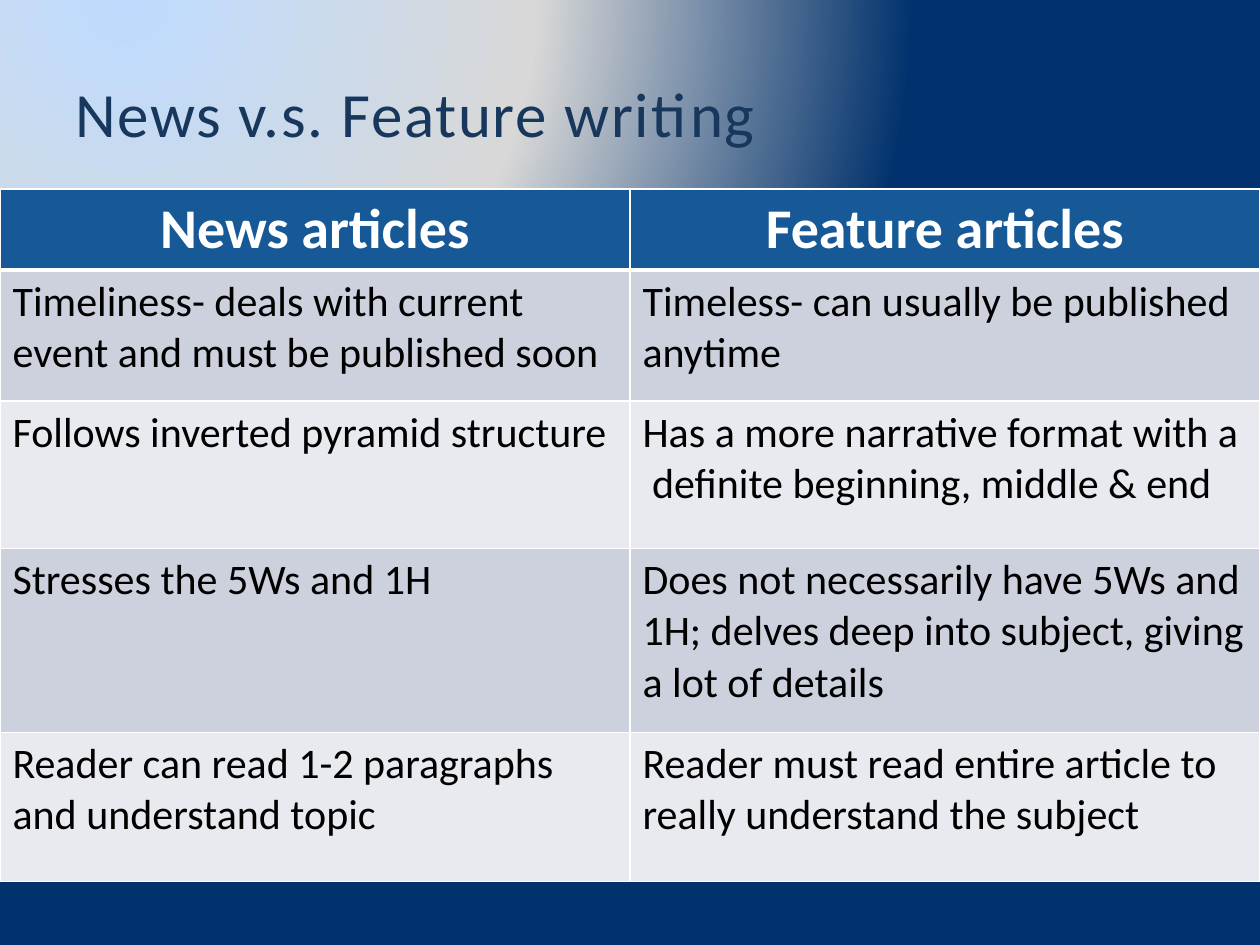
from dataclasses import dataclass

from pptx import Presentation
from pptx.dml.color import RGBColor
from pptx.enum.text import MSO_ANCHOR, PP_ALIGN
from pptx.oxml import parse_xml
from pptx.oxml.ns import nsdecls
from pptx.util import Cm, Pt


@dataclass(frozen=True)
class Theme:
    font: str = "Calibri"
    title_color: str = "17375D"
    header_fill: str = "165996"
    header_text: str = "FFFFFF"
    body_text: str = "000000"
    row_fills: tuple = ("CCD1DD", "E8EAEF")
    border: str = "FFFFFF"
    backdrop: tuple = ((0, "BEDBFE"), (52, "D8D8D8"), (100, "02326D"))
    title_size: int = 36
    header_size: int = 32
    body_size: int = 24


theme = Theme()


def add_run(paragraph, text, size, color, bold=False):
    run = paragraph.add_run()
    run.text = text
    run.font.name = theme.font
    run.font.size = Pt(size)
    run.font.bold = bold
    run.font.color.rgb = RGBColor.from_string(color)
    return run


def add_border(cell, side, points):
    """Draw one edge of a cell; side is L, R, T or B. Call before filling the cell."""
    cell._tc.get_or_add_tcPr().append(parse_xml(
        f'<a:ln{side} {nsdecls("a")} w="{Pt(points)}"><a:solidFill>'
        f'<a:srgbClr val="{theme.border}"/></a:solidFill></a:ln{side}>'))


prs = Presentation()
prs.slide_width, prs.slide_height = Cm(25.4), Cm(19.05)
slide = prs.slides.add_slide(prs.slide_layouts[5])

# Background: circular gradient spreading from the upper left
slide.background.fill.solid()
stops = "".join(f'<a:gs pos="{position * 1000}"><a:srgbClr val="{color}"/></a:gs>'
                for position, color in theme.backdrop)
gradient = parse_xml(
    f'<a:gradFill {nsdecls("a")} rotWithShape="1"><a:gsLst>{stops}</a:gsLst>'
    '<a:path path="circle"><a:fillToRect l="0" t="-80000" r="80000" b="180000"/>'
    '</a:path></a:gradFill>')
background = slide.background._cSld.bg.bgPr
background.replace(background[0], gradient)

# Title
title = slide.shapes.title
title.left, title.top, title.width, title.height = Cm(1.27), Cm(0.43), Cm(22.86), Cm(3.68)
title.text_frame.vertical_anchor = MSO_ANCHOR.MIDDLE
heading = title.text_frame.paragraphs[0]
heading.alignment = PP_ALIGN.LEFT
heading_run = add_run(heading, "News v.s. Feature writing", theme.title_size, theme.title_color)
heading_run._r.get_or_add_rPr().set("spc", "100")

# Comparison table
comparison = [
    ("News articles", "Feature articles"),
    ("Timeliness- deals with current event and must be published soon",
     "Timeless- can usually be published anytime"),
    ("Follows inverted pyramid structure",
     "Has a more narrative format with a  definite beginning, middle & end"),
    ("Stresses the 5Ws and 1H",
     "Does not necessarily have 5Ws and 1H; delves deep into subject, giving a lot of details"),
    ("Reader can read 1-2 paragraphs and understand topic",
     "Reader must read entire article to really understand the subject"),
]
row_heights = [1.6, 2.64, 2.97, 3.71, 3]

table = slide.shapes.add_table(len(comparison), 2, Cm(0), Cm(3.81),
                               Cm(25.4), Cm(sum(row_heights))).table
for row_index, (entries, height) in enumerate(zip(comparison, row_heights)):
    table.rows[row_index].height = Cm(height)
    is_header = row_index == 0
    for column_index, entry in enumerate(entries):
        cell = table.cell(row_index, column_index)
        for side in "LRTB":
            under_header = (row_index, side) in ((0, "B"), (1, "T"))
            add_border(cell, side, 3 if under_header else 1)
        fill = theme.header_fill if is_header else theme.row_fills[(row_index - 1) % 2]
        cell.fill.solid()
        cell.fill.fore_color.rgb = RGBColor.from_string(fill)
        paragraph = cell.text_frame.paragraphs[0]
        if is_header:
            paragraph.alignment = PP_ALIGN.CENTER
            add_run(paragraph, entry, theme.header_size, theme.header_text, bold=True)
        else:
            add_run(paragraph, entry, theme.body_size, theme.body_text)

prs.save("out.pptx")
